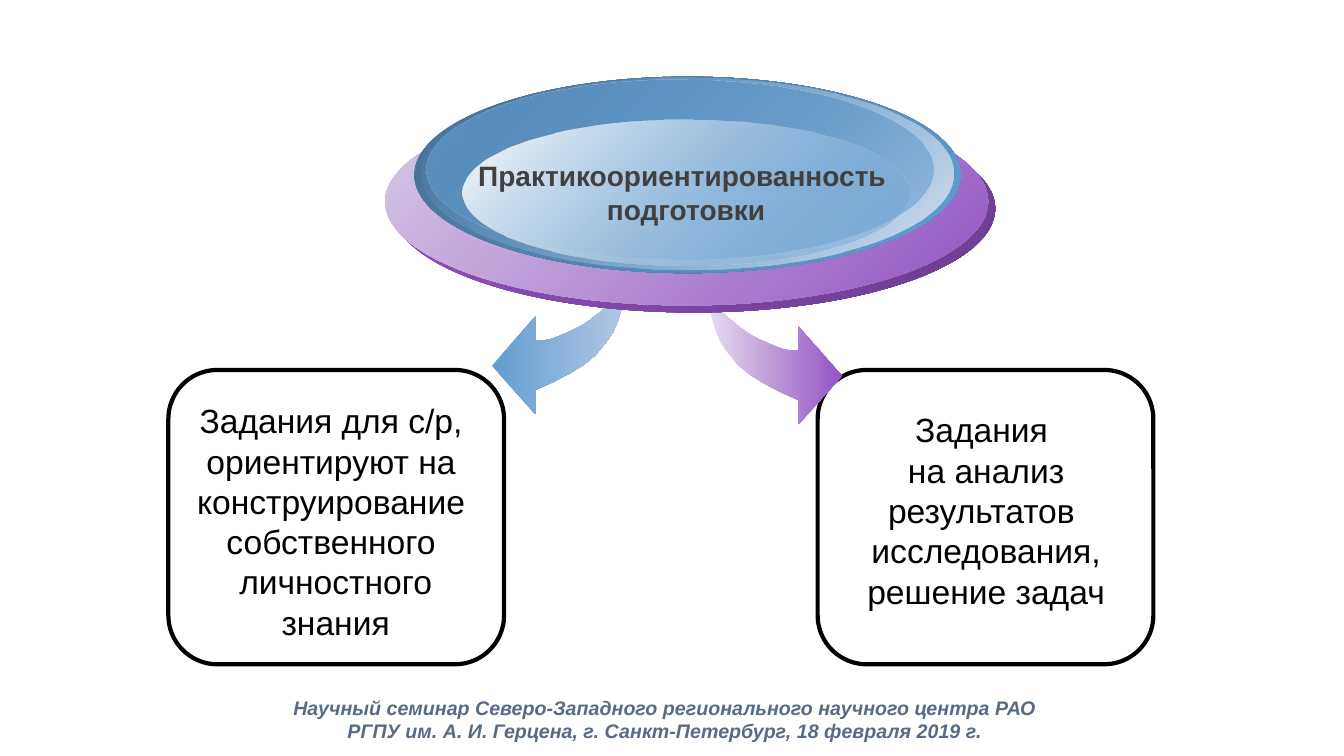
from lxml.etree import SubElement
from pptx import Presentation
from pptx.dml.color import RGBColor
from pptx.enum.shapes import MSO_SHAPE
from pptx.enum.text import MSO_ANCHOR, PP_ALIGN
from pptx.oxml.ns import qn
from pptx.util import Inches, Pt

WIDTH, HEIGHT = 13.33, 7.5
FONT = "Arial"
BLACK = RGBColor(0x00, 0x00, 0x00)
WHITE = RGBColor(0xFF, 0xFF, 0xFF)
CHARCOAL = RGBColor(0x40, 0x40, 0x40)
SLATE = RGBColor(0x59, 0x6A, 0x85)
BLUE = RGBColor(0x62, 0x9D, 0xD1)
MID_BLUE = RGBColor(0x59, 0x8E, 0xBD)
DEEP_BLUE = RGBColor(0x46, 0x70, 0x96)
LIGHT_BLUE = RGBColor(0xB2, 0xC8, 0xE3)
PALE_BLUE = RGBColor(0xD9, 0xE3, 0xF0)
PURPLE = RGBColor(0x94, 0x54, 0xC3)
DEEP_PURPLE = RGBColor(0x6C, 0x3D, 0x8F)
LIGHT_PURPLE = RGBColor(0xD8, 0xCB, 0xE7)
PALE_PURPLE = RGBColor(0xE4, 0xDB, 0xEE)

HEADING = ["Практикоориентированность ", "подготовки"]
FOOTER = ["Научный семинар Северо-Западного регионального научного центра РАО\n"
          "РГПУ им. А. И. Герцена, г. Санкт-Петербург, 18 февраля 2019 г."]
TASKS = [
    (1.67, (1.8, 3.92, 3.06, 2.52),
     ["Задания для с/р, ", "ориентируют на ", "конструирование ",
      "собственного ", "личностного знания"]),
    (8.11, (8.32, 4.01, 2.92, 2.12),
     ["Задания ", "на анализ результатов ", "исследования, решение задач"]),
]
CARD_TOP, CARD_WIDTH, CARD_HEIGHT = 3.67, 3.33, 2.92

DISC_LAYERS = [
    ((3.89, 1.04, 5.98, 2.06), (PURPLE, 100), (DEEP_PURPLE, 100)),
    ((3.82, 0.97, 5.98, 2.06), (LIGHT_PURPLE, 100), (PURPLE, 100)),
    ((4.11, 0.76, 5.42, 1.95), (DEEP_BLUE, 100), (BLUE, 100)),
    ((4.18, 0.77, 5.28, 1.9), (BLUE, 0), (PALE_BLUE, 100)),
    ((4.23, 0.79, 5.03, 1.78), (MID_BLUE, 100), (BLUE, 48)),
    ((4.59, 1.19, 4.43, 1.44), (WHITE, 100), (BLUE, 38)),
]

ARROW_OUTLINE = [
    (6.2, 2.75), (6.19, 2.9), (6.17, 3.05), (6.13, 3.18), (6.08, 3.3),
    (6, 3.41), (5.91, 3.52), (5.79, 3.62), (5.66, 3.7), (5.49, 3.79),
    (5.31, 3.87), (5.31, 4.11), (4.88, 3.63), (5.31, 3.14), (5.31, 3.38),
    (5.39, 3.38), (5.48, 3.36), (5.58, 3.32), (5.67, 3.28), (5.77, 3.23),
    (5.86, 3.17), (5.95, 3.1), (6.03, 3.03), (6.1, 2.96), (6.15, 2.89),
    (6.18, 2.82), (6.19, 2.75),
]
MIRROR_SUM, MIRROR_DROP = 13.23, 0.1


def inches(box):
    return [Inches(length) for length in box]


def paint_gradient(shape, start, end, angle):
    shape.shadow.inherit = False
    shape.line.fill.background()
    shape.fill.gradient()
    shape.fill.gradient_angle = angle
    for stop, (color, _) in zip(shape.fill.gradient_stops, (start, end)):
        stop.color.rgb = color
    colors = shape._element.spPr.iter(qn("a:srgbClr"))
    for element, (_, opacity) in zip(colors, (start, end)):
        if opacity < 100:
            SubElement(element, qn("a:alpha"), val=str(opacity * 1000))


def write(shape, lines, size, color, bold=False, italic=False, wrap=True):
    frame = shape.text_frame
    frame.word_wrap = wrap
    for index, line in enumerate(lines):
        paragraph = frame.add_paragraph() if index else frame.paragraphs[0]
        paragraph.text = line
        paragraph.alignment = PP_ALIGN.CENTER
        font = paragraph.font
        font.name, font.size = FONT, Pt(size)
        font.bold, font.italic = bold, italic
        font.color.rgb = color


def add_arrow(shapes, outline, start, end):
    points = [tuple(inches(point)) for point in outline]
    builder = shapes.build_freeform(*points[0], scale=1.0)
    builder.add_line_segments(points[1:], close=True)
    paint_gradient(builder.convert_to_shape(), (start, 100), (end, 100), 0)


def main():
    presentation = Presentation()
    presentation.slide_width, presentation.slide_height = inches((WIDTH, HEIGHT))
    slide = presentation.slides.add_slide(presentation.slide_layouts[6])
    shapes = slide.shapes

    for left, _, _ in TASKS:
        card = shapes.add_shape(
            MSO_SHAPE.ROUNDED_RECTANGLE,
            *inches((left, CARD_TOP, CARD_WIDTH, CARD_HEIGHT)))
        card.shadow.inherit = False
        card.fill.background()
        card.line.color.rgb = BLACK
        card.line.width = Pt(3)

    mirrored = [(MIRROR_SUM - x, y + MIRROR_DROP) for x, y in ARROW_OUTLINE]
    add_arrow(shapes, ARROW_OUTLINE, BLUE, LIGHT_BLUE)
    add_arrow(shapes, mirrored, PALE_PURPLE, PURPLE)

    disc = shapes.add_group_shape()
    for box, start, end in DISC_LAYERS:
        layer = disc.shapes.add_shape(MSO_SHAPE.OVAL, *inches(box))
        paint_gradient(layer, start, end, 315)
    layer.text_frame.vertical_anchor = MSO_ANCHOR.MIDDLE
    write(layer, HEADING, 20, CHARCOAL, bold=True, wrap=False)

    for _, box, lines in TASKS:
        write(shapes.add_textbox(*inches(box)), lines, 24, BLACK)
    footer = shapes.add_textbox(*inches((0, 6.85, 13.19, 0.57)))
    write(footer, FOOTER, 14, SLATE, bold=True, italic=True)

    presentation.save("out.pptx")


if __name__ == "__main__":
    main()
